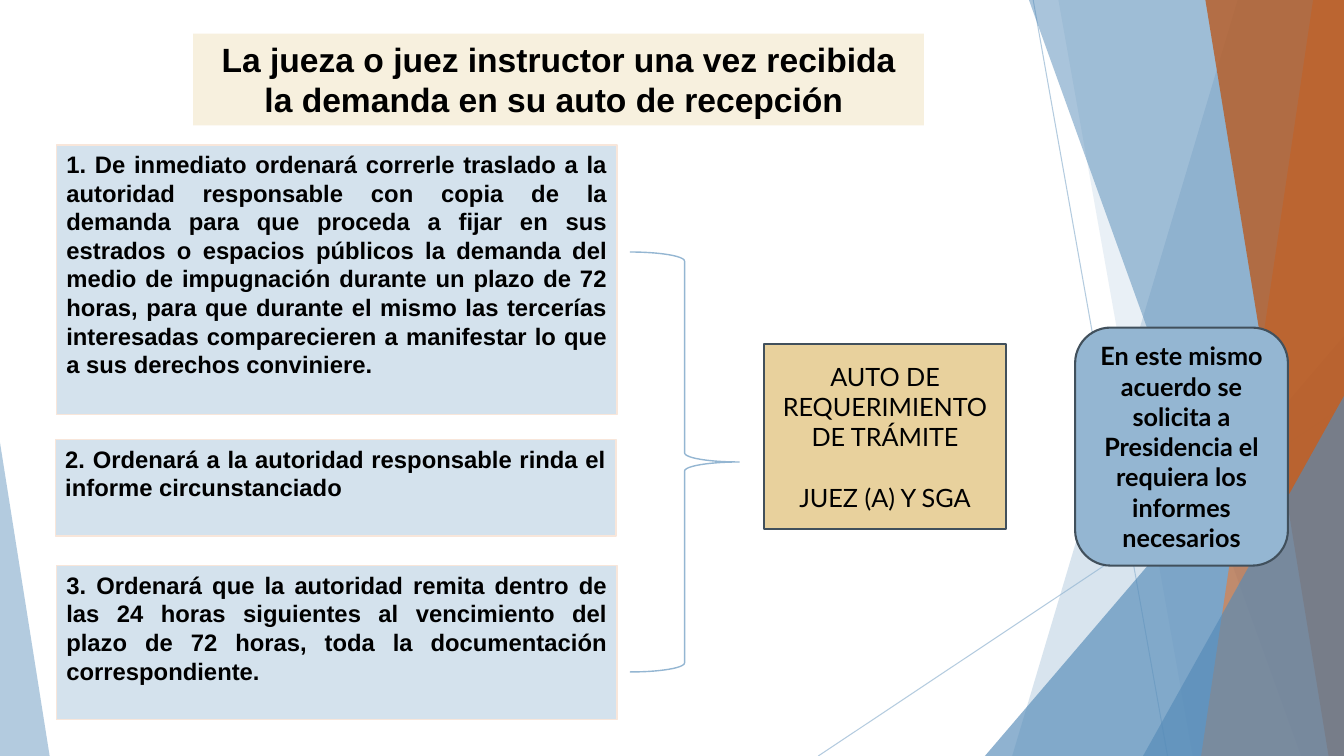
from lxml import etree
from pptx import Presentation
from pptx.dml.color import RGBColor
from pptx.enum.shapes import MSO_CONNECTOR, MSO_SHAPE
from pptx.enum.text import MSO_ANCHOR, PP_ALIGN
from pptx.oxml.ns import qn
from pptx.util import Pt

# Content; all lengths in points
WIDTH, HEIGHT = 960, 540
COLOURS = {
    "sky": "94B6D2", "blue": "558BB8", "orange": "DD8047", "rust": "B95B22",
    "cream": "F7F0DE", "pale": "D4E2ED", "peach": "F8E6DA",
    "sand": "E8D19D", "slate": "41505C", "black": "000000",
}
TITLE = "La jueza o juez instructor una vez recibida la demanda en su auto de recepción "
STEPS = [  # left, top, height, text
    (40.3, 103.5, 192.8,
     "1. De inmediato ordenará correrle traslado a la autoridad responsable con copia "
     "de la demanda para que proceda a fijar en sus estrados o espacios públicos la "
     "demanda del medio de impugnación durante un plazo de 72 horas, para que durante "
     "el mismo las tercerías interesadas comparecieren a manifestar lo que a sus "
     "derechos conviniere. "),
    (39.5, 314, 69,
     "2. Ordenará a la autoridad responsable rinda el informe circunstanciado"),
    (40.3, 404, 110,
     "3. Ordenará que la autoridad remita dentro de las 24 horas siguientes al "
     "vencimiento del plazo de 72 horas, toda la documentación correspondiente."),
]
STEP_WIDTH = 400.5
ORDER = ["AUTO DE REQUERIMIENTO DE TRÁMITE", "JUEZ (A) Y SGA"]
REQUEST = ["En este mismo acuerdo se solicita a Presidencia el requiera los informes necesarios"]

RAYS = [((738, 0), (834, HEIGHT)), ((WIDTH, 290), (584.5, HEIGHT))]
TOP_RIGHT, BOTTOM_RIGHT = (WIDTH, 0), (WIDTH, HEIGHT)
FACETS = [  # colour, opacity in percent, corners
    ("sky", 36, [(884, 0), TOP_RIGHT, BOTTOM_RIGHT, (723, HEIGHT)]),
    ("sky", 20, [(756, 0), TOP_RIGHT, BOTTOM_RIGHT, (852, HEIGHT)]),
    ("blue", 66, [(703.5, HEIGHT), (WIDTH, 240), BOTTOM_RIGHT]),
    ("blue", 50, [(735, 0), TOP_RIGHT, BOTTOM_RIGHT, (929.5, HEIGHT)]),
    ("orange", 70, [(938, 0), TOP_RIGHT, BOTTOM_RIGHT, (858, HEIGHT)]),
    ("rust", 80, [(861, 0), TOP_RIGHT, BOTTOM_RIGHT, (949, HEIGHT)]),
    ("blue", 66, [(816.5, HEIGHT), (WIDTH, 283), BOTTOM_RIGHT]),
    ("sky", 70, [(0, 316), (35.5, HEIGHT), (0, HEIGHT)]),
]

presentation = Presentation()
presentation.slide_width, presentation.slide_height = Pt(WIDTH), Pt(HEIGHT)
slide = presentation.slides.add_slide(presentation.slide_layouts[6])


def colour(name):
    return RGBColor.from_string(COLOURS[name])


def set_opacity(shape, percent):
    for element in shape._element.spPr.iter(qn("a:srgbClr")):
        etree.SubElement(element, qn("a:alpha"), val=str(percent * 1000))


def paint(shape, fill=None, line=None, line_width=1):
    shape.shadow.inherit = False
    if fill:
        shape.fill.solid()
        shape.fill.fore_color.rgb = colour(fill)
    else:
        shape.fill.background()
    if line:
        shape.line.color.rgb = colour(line)
        shape.line.width = Pt(line_width)
    else:
        shape.line.fill.background()


def add_box(kind, box, fill=None, line=None, line_width=1):
    shape = slide.shapes.add_shape(kind, *(Pt(length) for length in box))
    paint(shape, fill, line, line_width)
    return shape


def write(shape, texts, size, font, bold, align, anchor, gap=0):
    frame = shape.text_frame
    frame.word_wrap = True
    frame.vertical_anchor = anchor
    for index, text in enumerate(texts):
        paragraph = frame.add_paragraph() if index else frame.paragraphs[0]
        paragraph.alignment = align
        if index:
            paragraph.space_before = Pt(gap)
        run = paragraph.add_run()
        run.text = text
        run.font.size, run.font.name, run.font.bold = Pt(size), font, bold
        run.font.color.rgb = colour("black")


# Background rays and facets
for start, end in RAYS:
    ray = slide.shapes.add_connector(
        MSO_CONNECTOR.STRAIGHT, *(Pt(length) for length in start + end))
    ray.line.color.rgb = colour("sky")
    ray.line.width = Pt(0.75)
    set_opacity(ray, 70)
    etree.SubElement(ray._element.spPr, qn("a:effectLst"))

for name, opacity, corners in FACETS:
    points = [(Pt(x), Pt(y)) for x, y in corners]
    builder = slide.shapes.build_freeform(*points[0])
    builder.add_line_segments(points[1:], close=True)
    facet = builder.convert_to_shape()
    paint(facet, name)
    set_opacity(facet, opacity)

# Title
title = add_box(MSO_SHAPE.RECTANGLE, (138, 24, 522, 65.5), "cream")
write(title, [TITLE], 24, "Arial", True, PP_ALIGN.CENTER, MSO_ANCHOR.TOP)

# Numbered steps
for left, top, height, text in STEPS:
    step = add_box(MSO_SHAPE.RECTANGLE, (left, top, STEP_WIDTH, height), "pale", "peach")
    write(step, [text], 17, "Arial", True, PP_ALIGN.JUSTIFY, MSO_ANCHOR.TOP)

# Brace leading to the order and the request
add_box(MSO_SHAPE.RIGHT_BRACE, (450, 180, 78, 300), line="sky")
order = add_box(MSO_SHAPE.RECTANGLE, (545.8, 246, 172.8, 132), "sand", "slate", 1.5)
write(order, ORDER, 18, "Lato", False, PP_ALIGN.CENTER, MSO_ANCHOR.MIDDLE, gap=21.6)
request = add_box(MSO_SHAPE.ROUNDED_RECTANGLE, (768, 234, 152, 170), "sky", "slate", 1.5)
write(request, REQUEST, 18, "Lato", True, PP_ALIGN.CENTER, MSO_ANCHOR.MIDDLE)

presentation.save("out.pptx")
